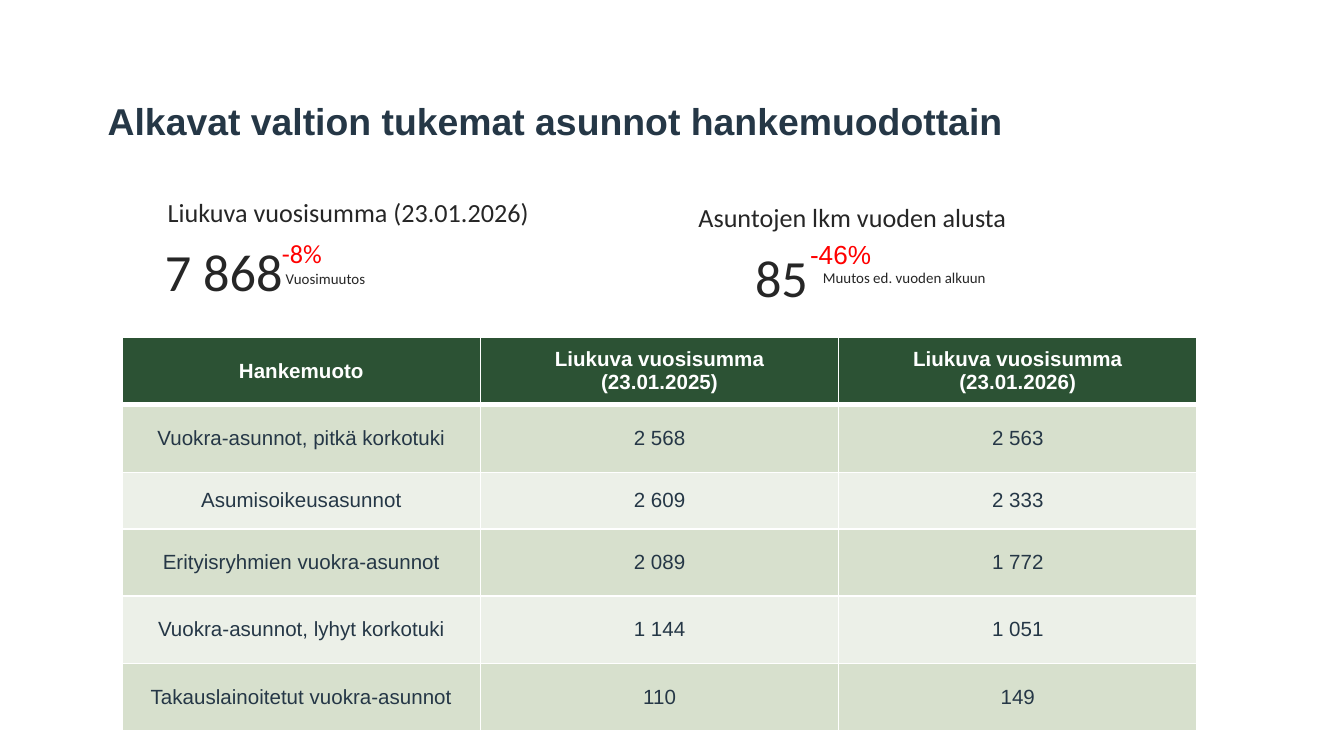
from dataclasses import dataclass

from lxml import etree
from pptx import Presentation
from pptx import util as u
from pptx.dml.color import RGBColor
from pptx.enum import text
from pptx.oxml.ns import qn


@dataclass(frozen=True)
class Theme:
    heading_font: str = "Arial"
    body_font: str = "Calibri"
    navy: str = "253746"
    ink: str = "262626"
    red: str = "FF0000"
    white: str = "FFFFFF"
    header: str = "2C5234"
    bands: tuple = ("D7E0CD", "ECF0E8")
    title_size: int = 20
    figure_size: int = 28
    label_size: int = 14
    note_size: int = 8
    table_size: int = 11
    rule: int = 1
    header_rule: int = 3


class SlideBuilder:
    def __init__(self, s, theme):
        self.s, self.t = s, theme

    def style(self, p, size, color, font, bold=False, align=text.PP_ALIGN.LEFT):
        p.alignment = align
        p.font.name, p.font.size, p.font.bold = font, u.Pt(size), bold
        p.font.color.rgb = RGBColor.from_string(color)

    def title(self, words, box):
        sp = self.s.shapes.title
        sp.left, sp.top, sp.width, sp.height = map(u.Cm, box)
        tf = sp.text_frame
        tf.text = words
        tf.auto_size = text.MSO_AUTO_SIZE.NONE
        tf.vertical_anchor = text.MSO_ANCHOR.MIDDLE
        self.style(tf.paragraphs[0], self.t.title_size, self.t.navy,
                   self.t.heading_font, bold=True)

    def label(self, words, box, size, color=None, font=None,
              anchor=text.MSO_ANCHOR.TOP, align=text.PP_ALIGN.LEFT):
        tf = self.s.shapes.add_textbox(*map(u.Cm, box)).text_frame
        tf.word_wrap = True
        tf.vertical_anchor = anchor
        tf.text = words
        self.style(tf.paragraphs[0], size, color or self.t.ink,
                   font or self.t.body_font, align=align)

    def figure(self, words, box):
        self.label(words, box, self.t.figure_size,
                   anchor=text.MSO_ANCHOR.BOTTOM, align=text.PP_ALIGN.RIGHT)

    def change(self, words, box, font):
        self.label(words, box, self.t.label_size, self.t.red, font,
                   text.MSO_ANCHOR.BOTTOM)

    def borders(self, cell, top, bottom):
        tc_pr = cell._tc.get_or_add_tcPr()
        widths = {"lnL": self.t.rule, "lnR": self.t.rule, "lnT": top, "lnB": bottom}
        for side, width in widths.items():
            ln = etree.SubElement(tc_pr, qn(f"a:{side}"), w=str(u.Pt(width)))
            fill = etree.SubElement(ln, qn("a:solidFill"))
            etree.SubElement(fill, qn("a:srgbClr"), val=self.t.white)

    def table(self, rows, left, top, col_width, heights):
        t = self.t
        cols = len(rows[0])
        table = self.s.shapes.add_table(
            len(rows), cols, u.Cm(left), u.Cm(top),
            u.Cm(col_width * cols), u.Cm(sum(heights))).table
        for col in table.columns:
            col.width = u.Cm(col_width)
        for i, (row, height) in enumerate(zip(rows, heights)):
            table.rows[i].height = u.Cm(height)
            head = i == 0
            for j, words in enumerate(row):
                cell = table.cell(i, j)
                self.borders(cell, t.header_rule if i == 1 else t.rule,
                             t.header_rule if head else t.rule)
                cell.fill.solid()
                cell.fill.fore_color.rgb = RGBColor.from_string(
                    t.header if head else t.bands[(i - 1) % 2])
                cell.margin_left = cell.margin_right = u.Cm(0.4)
                cell.vertical_anchor = text.MSO_ANCHOR.MIDDLE
                cell.text = words
                self.style(cell.text_frame.paragraphs[0], t.table_size,
                           t.white if head else t.navy, t.heading_font,
                           bold=head, align=text.PP_ALIGN.CENTER)


def main():
    theme = Theme()
    prs = Presentation()
    prs.slide_width, prs.slide_height = u.Cm(25.4), u.Cm(14.29)
    b = SlideBuilder(prs.slides.add_slide(prs.slide_layouts[5]), theme)

    b.title("Alkavat valtion tukemat asunnot hankemuodottain",
            (1.78, 1.8, 21.87, 0.97))

    # Rolling annual sum
    b.figure("7 868", (0, 4.39, 5.59, 1.45))
    b.change("-8%", (5.08, 4.37, 4.14, 0.84), theme.body_font)
    b.label("Liukuva vuosisumma (23.01.2026)", (2.92, 3.58, 8.18, 0.84),
            theme.label_size)
    b.label("Vuosimuutos", (5.15, 4.98, 3.2, 0.61), theme.note_size)

    # Dwellings since the start of the year
    b.figure("85", (10.31, 4.5, 5.21, 1.45))
    b.change("-46%", (15.06, 4.39, 3.73, 0.84), theme.heading_font)
    b.label("Asuntojen lkm vuoden alusta", (12.95, 3.68, 6.4, 0.86),
            theme.label_size)
    b.label("Muutos ed. vuoden alkuun", (15.3, 4.95, 6.55, 0.61), theme.note_size)

    # Dwellings by project type
    rows = [
        ("Hankemuoto", "Liukuva vuosisumma (23.01.2025)",
         "Liukuva vuosisumma (23.01.2026)"),
        ("Vuokra-asunnot, pitkä korkotuki", "2 568", "2 563"),
        ("Asumisoikeusasunnot", "2 609", "2 333"),
        ("Erityisryhmien vuokra-asunnot", "2 089", "1 772"),
        ("Vuokra-asunnot, lyhyt korkotuki", "1 144", "1 051"),
        ("Takauslainoitetut vuokra-asunnot", "110", "149"),
    ]
    b.table(rows, 2.31, 6.38, 6.77, [1.27, 1.28, 1.07, 1.27, 1.27, 1.27])

    prs.save("out.pptx")


if __name__ == "__main__":
    main()
